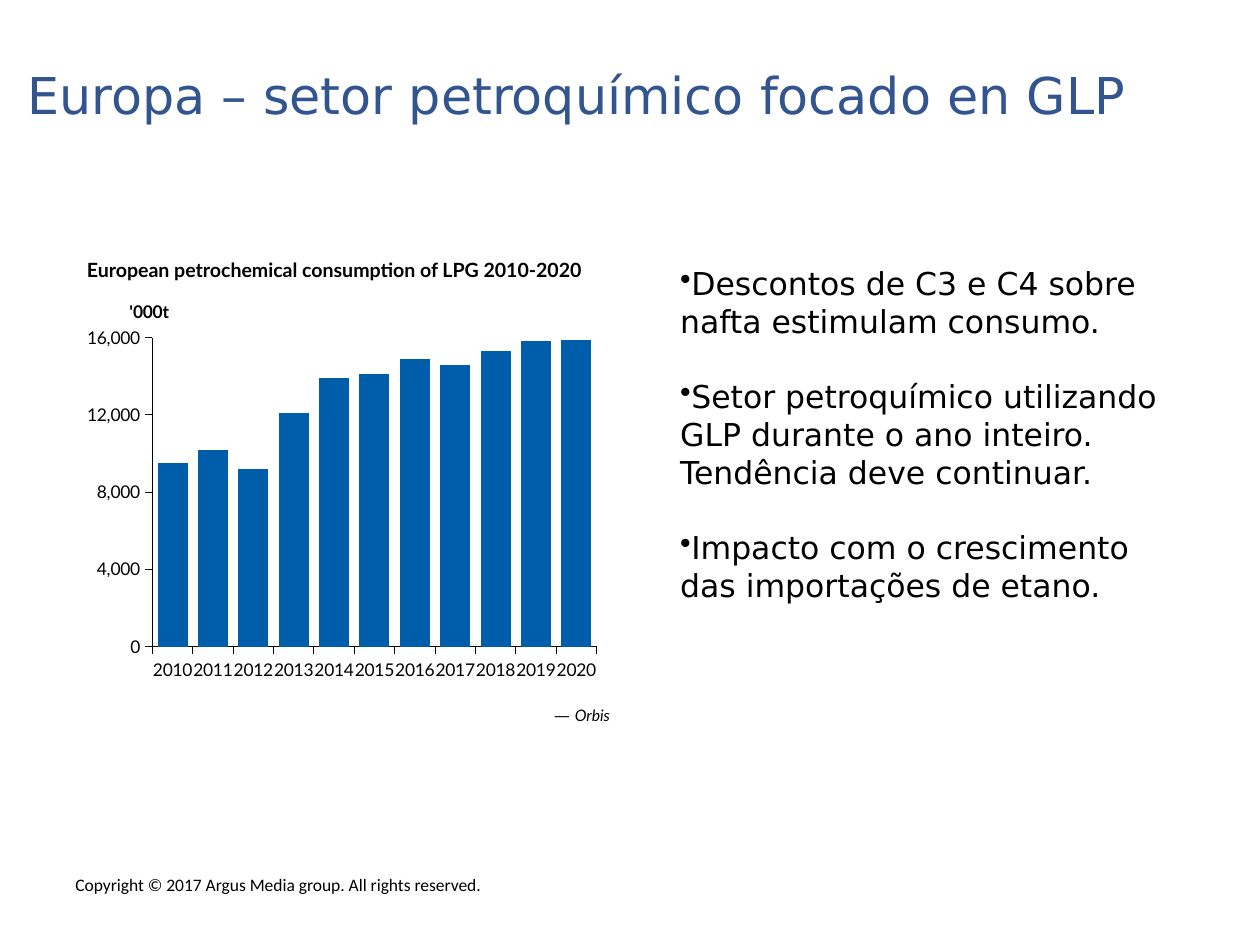
"""Build a slide on European petrochemical demand for LPG."""
from dataclasses import dataclass

from lxml import etree
from pptx import Presentation, util as u
from pptx.chart.data import CategoryChartData
from pptx.dml.color import RGBColor
from pptx.enum import chart as ch, text as tx
from pptx.oxml import ns

HUES = {"ink": "000000", "head": "32548F", "bar": "005DAA"}
SANS, LATO, BODY = "DejaVu Sans", "Lato", "Calibri"
WIDE, HIGH = u.Inches(10), u.Inches(7.5)
COLS, ROWS = 100, 75
YEARS = range(2010, 2021)
TONS = (9500, 10200, 9200, 12100, 13900, 14100,
        14900, 14600, 15300, 15800, 15900)
POINTS = (
    "Descontos de C3 e C4 sobre nafta estimulam consumo.",
    "Setor petroquímico utilizando GLP durante o ano inteiro. "
    "Tendência deve continuar.",
    "Impacto com o crescimento das importações de etano.",
)


@dataclass(frozen=True)
class Area:
    """Hold a place in grid columns and rows."""
    col: float
    row: float
    wide: float
    high: float

    def emu(self) -> tuple:
        """Return left, top, width and height for a shape."""
        return (int(WIDE * self.col / COLS), int(HIGH * self.row / ROWS),
                int(WIDE * self.wide / COLS), int(HIGH * self.high / ROWS))


@dataclass(frozen=True)
class Run:
    """Hold words and the font they are set in."""
    words: str
    face: str = SANS


def hue(name: str) -> RGBColor:
    """Look up a colour by name."""
    return RGBColor.from_string(HUES[name])


def style(font, size: float, face: str, tint: str = "ink",
          bold: bool = False, slant: bool = False) -> None:
    """Set the look of a font."""
    font.size, font.name = u.Pt(size), face
    font.bold, font.italic = bold, slant
    font.color.rgb = hue(tint)


def write(slide, area: Area, *paras: tuple, size: float, tint: str = "ink",
          bold: bool = False, slant: bool = False, align=tx.PP_ALIGN.LEFT,
          gap: float = 0, bullet: str = "", inset: bool = True) -> None:
    """Add a text box whose paragraphs are tuples of runs."""
    frame = slide.shapes.add_textbox(*area.emu()).text_frame
    frame.word_wrap = True
    if not inset:
        frame.margin_left = frame.margin_right = 0
        frame.margin_top = frame.margin_bottom = 0
    for i, runs in enumerate(paras):
        para = frame.add_paragraph() if i else frame.paragraphs[0]
        para.alignment = align
        if i:
            para.space_before = u.Pt(gap)
        if bullet:
            props = para._p.get_or_add_pPr()
            etree.SubElement(props, ns.qn("a:buChar"), char=bullet)
        for part in runs:
            run = para.add_run()
            run.text = part.words
            style(run.font, size, part.face, tint, bold, slant)


def place(owner, **spots: float) -> None:
    """Give a chart part a fixed place, in shares of the chart."""
    layout = owner.get_or_add_layout() if hasattr(
        owner, "get_or_add_layout") else owner.find(ns.qn("c:layout"))
    if layout is None:
        layout = etree.Element(ns.qn("c:layout"))
        head = owner.find(ns.qn("c:tx"))
        owner.insert(0 if head is None else owner.index(head) + 1, layout)
    for old in list(layout):
        layout.remove(old)
    manual = etree.SubElement(layout, ns.qn("c:manualLayout"))
    if "w" in spots:
        etree.SubElement(manual, ns.qn("c:layoutTarget"), val="inner")
    for key in "xy":
        etree.SubElement(manual, ns.qn(f"c:{key}Mode"), val="edge")
    for key, share in spots.items():
        etree.SubElement(manual, ns.qn(f"c:{key}"), val=str(share))


def plot(slide, area: Area) -> None:
    """Draw the yearly columns with their axes."""
    data = CategoryChartData(number_format="#,##0")
    data.categories = [str(year) for year in YEARS]
    data.add_series("Series 1", TONS)
    chart = slide.shapes.add_chart(
        ch.XL_CHART_TYPE.COLUMN_STACKED, *area.emu(), data).chart
    chart.has_legend = chart.has_title = False
    style(chart.font, 10, LATO)
    bars = chart.plots[0]
    bars.gap_width, bars.overlap = 35, 100
    bars.vary_by_categories = False
    fill = bars.series[0].format.fill
    fill.solid()
    fill.fore_color.rgb = hue("bar")
    for axis in (chart.category_axis, chart.value_axis):
        axis.has_major_gridlines = False
        axis.major_tick_mark = ch.XL_TICK_MARK.OUTSIDE
        axis.minor_tick_mark = ch.XL_TICK_MARK.NONE
        axis.format.line.color.rgb = hue("ink")
        axis.format.line.width = u.Pt(0.5)
    tons = chart.value_axis
    tons.minimum_scale, tons.maximum_scale, tons.major_unit = 0, 16000, 4000
    tons.tick_labels.number_format = "#,##0"
    tons.tick_labels.number_format_is_linked = False
    frame = tons.axis_title.text_frame
    frame._txBody.bodyPr.set("rot", "0")
    run = frame.paragraphs[0].add_run()
    run.text = "'000t"
    style(run.font, 10, LATO, bold=True)
    place(tons.axis_title._element, x=0.07, y=0.01)
    place(chart._chartSpace.chart.plotArea, x=0.12, y=0.11, w=0.85, h=0.75)


def main() -> None:
    """Build and save the slide."""
    deck = Presentation()
    deck.slide_width, deck.slide_height = WIDE, HIGH
    slide = deck.slides.add_slide(deck.slide_layouts[6])
    write(slide, Area(5, 68.9, 41.8, 4),
          (Run("Copyright © 2017 Argus Media group. All rights reserved.",
               BODY),), size=10)
    write(slide, Area(1.2, 4.6, 97.4, 13.7),
          (Run("Europa – setor petroquímico focado en GLP"),),
          size=29, tint="head")
    write(slide, Area(53, 20.5, 42.5, 46.7),
          *((Run(point),) for point in POINTS),
          size=18, gap=21.3, bullet="•")
    plot(slide, Area(6.9, 23.2, 41.7, 32.7))
    write(slide, Area(6.9, 20.5, 40.8, 2.6),
          (Run("European petrochemical consumption of LPG 2010-2020", LATO),),
          size=11.2, bold=True, inset=False)
    write(slide, Area(31.1, 55.5, 18.3, 2.5),
          (Run("— "), Run("Orbis", LATO)),
          size=9, slant=True, align=tx.PP_ALIGN.RIGHT)
    deck.save("out.pptx")


if __name__ == "__main__":
    main()
